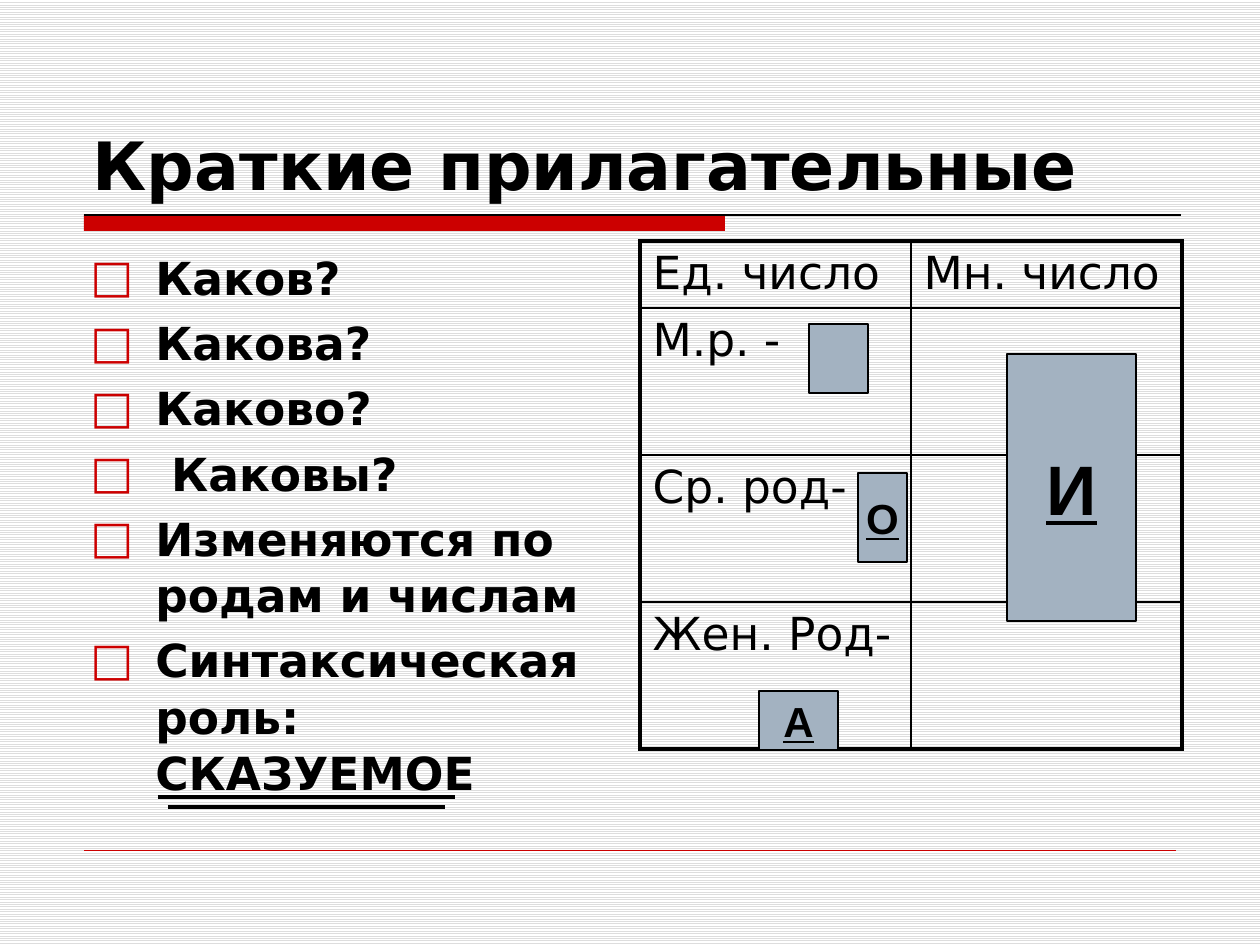
from lxml.etree import SubElement
from pptx import Presentation
from pptx.dml.color import RGBColor
from pptx.enum.dml import MSO_PATTERN
from pptx.enum.shapes import MSO_CONNECTOR, MSO_SHAPE
from pptx.enum.text import MSO_ANCHOR, PP_ALIGN
from pptx.oxml.ns import qn
from pptx.util import Emu, Pt

# Content
TITLE = "Краткие прилагательные"
BULLETS = [
    "Каков?",
    "Какова?",
    "Каково?",
    " Каковы?",
    "Изменяются по родам и числам",
    "Синтаксическая роль: СКАЗУЕМОЕ",
]
TABLE_ROWS = [
    ("Ед. число", "Мн. число"),
    ("М.р. -", ""),
    ("Ср. род-", ""),
    ("Жен. Род-", ""),
]
ROW_HEIGHTS = [67, 147, 147, 147]
COLUMN_WIDTH = 271
# Endings: text, font size, left, top, width, height
ENDINGS = [
    ("", 24, 809, 324, 59, 69),
    ("О", 24, 858, 473, 49, 89),
    ("А", 24, 759, 691, 79, 59),
    ("И", 40, 1007, 354, 129, 267),
]
# Rules: left, right, y, colour, width in points
RULES = [
    (84, 1181, 215, "black", 0.75),
    (84, 1176, 850, "red", 0.25),
    (158, 455, 797, "black", 2.25),
    (168, 445, 807, "black", 2.25),
]
COLORS = {"black": "000000", "red": "CC0000", "box": "A3B2C1",
          "stripe": "DDDDDD", "white": "FFFFFF"}
FONT = "DejaVu Sans"


def px(value):
    return Emu(round(value * 914400 / 126))


def color(name):
    return RGBColor.from_string(COLORS[name])


def write(paragraph, text, size=26, font=FONT, bold=False, underline=False,
          align=PP_ALIGN.LEFT, before=0, spacing=1.0):
    paragraph.alignment = align
    paragraph.space_before = Pt(before)
    paragraph.line_spacing = spacing
    run = paragraph.add_run()
    run.text = text
    run.font.size = Pt(size)
    run.font.name = font
    run.font.bold = bold
    run.font.underline = underline
    run.font.color.rgb = color("black")


def add_bullet(paragraph, indent):
    properties = paragraph._p.get_or_add_pPr()
    properties.set("marL", str(indent))
    properties.set("indent", str(-indent))
    bullet_color = SubElement(properties, qn("a:buClr"))
    SubElement(bullet_color, qn("a:srgbClr"), val=COLORS["red"])
    SubElement(properties, qn("a:buFont"), typeface=FONT)
    SubElement(properties, qn("a:buChar"), char="□")


def set_borders(cell, widths):
    properties = cell._tc.get_or_add_tcPr()
    for position, (side, width) in enumerate(widths.items()):
        border = properties.makeelement(qn(f"a:ln{side}"), {"w": str(Pt(width))})
        fill = SubElement(border, qn("a:solidFill"))
        SubElement(fill, qn("a:srgbClr"), val=COLORS["black"])
        properties.insert(position, border)


def add_box(shapes, left, top, width, height, fill):
    shape = shapes.add_shape(MSO_SHAPE.RECTANGLE, px(left), px(top), px(width), px(height))
    shape.shadow.inherit = False
    shape.fill.solid()
    shape.fill.fore_color.rgb = color(fill)
    return shape


def add_rule(shapes, left, right, y, line_color, width):
    rule = shapes.add_connector(MSO_CONNECTOR.STRAIGHT, px(left), px(y), px(right), px(y))
    rule.line.color.rgb = color(line_color)
    rule.line.width = Pt(width)
    SubElement(rule._element.spPr, qn("a:effectLst"))


def main():
    presentation = Presentation()
    presentation.slide_width, presentation.slide_height = px(1260), px(945)
    slide = presentation.slides.add_slide(presentation.slide_layouts[5])
    shapes = slide.shapes

    # Striped background
    background = slide.background.fill
    background.patterned()
    background.pattern = MSO_PATTERN.LIGHT_HORIZONTAL
    background.fore_color.rgb = color("stripe")
    background.back_color.rgb = color("white")

    # Title and the red bar below it
    title = shapes.title
    title.left, title.top, title.width, title.height = px(80), px(42), px(1102), px(168)
    title.text_frame.vertical_anchor = MSO_ANCHOR.BOTTOM
    write(title.text_frame.paragraphs[0], TITLE, size=38, bold=True)
    add_box(shapes, 84, 215, 641, 16, "red").line.fill.background()

    # Bulleted list
    frame = shapes.add_textbox(px(78), px(242), px(541), px(588)).text_frame
    frame.word_wrap = True
    for index, text in enumerate(BULLETS):
        paragraph = frame.add_paragraph() if index else frame.paragraphs[0]
        write(paragraph, text, bold=True, before=5.2, spacing=1.03)
        add_bullet(paragraph, px(65))

    # Table with a heavy outer frame
    row_count, column_count = len(TABLE_ROWS), len(TABLE_ROWS[0])
    table = shapes.add_table(row_count, column_count, px(640), px(241),
                             px(COLUMN_WIDTH * column_count), px(sum(ROW_HEIGHTS))).table
    table.first_row = table.horz_banding = False
    for column in table.columns:
        column.width = px(COLUMN_WIDTH)
    for row_index, texts in enumerate(TABLE_ROWS):
        table.rows[row_index].height = px(ROW_HEIGHTS[row_index])
        for column_index, text in enumerate(texts):
            cell = table.cell(row_index, column_index)
            cell.fill.background()
            outer = {"L": column_index == 0, "R": column_index == column_count - 1,
                     "T": row_index == 0, "B": row_index == row_count - 1}
            set_borders(cell, {side: 2.25 if edge else 1 for side, edge in outer.items()})
            if text:
                write(cell.text_frame.paragraphs[0], text, before=5.2)

    # Boxes with the endings
    for text, size, left, top, width, height in ENDINGS:
        box = add_box(shapes, left, top, width, height, "box")
        box.line.color.rgb = color("black")
        box.line.width = Pt(0.75)
        if text:
            box.text_frame.word_wrap = False
            box.text_frame.vertical_anchor = MSO_ANCHOR.MIDDLE
            write(box.text_frame.paragraphs[0], text, size=size, font="Arial",
                  bold=True, underline=True, align=PP_ALIGN.CENTER)

    # Rules, with the double underline of the predicate
    for rule in RULES:
        add_rule(shapes, *rule)

    presentation.save("out.pptx")


if __name__ == "__main__":
    main()
